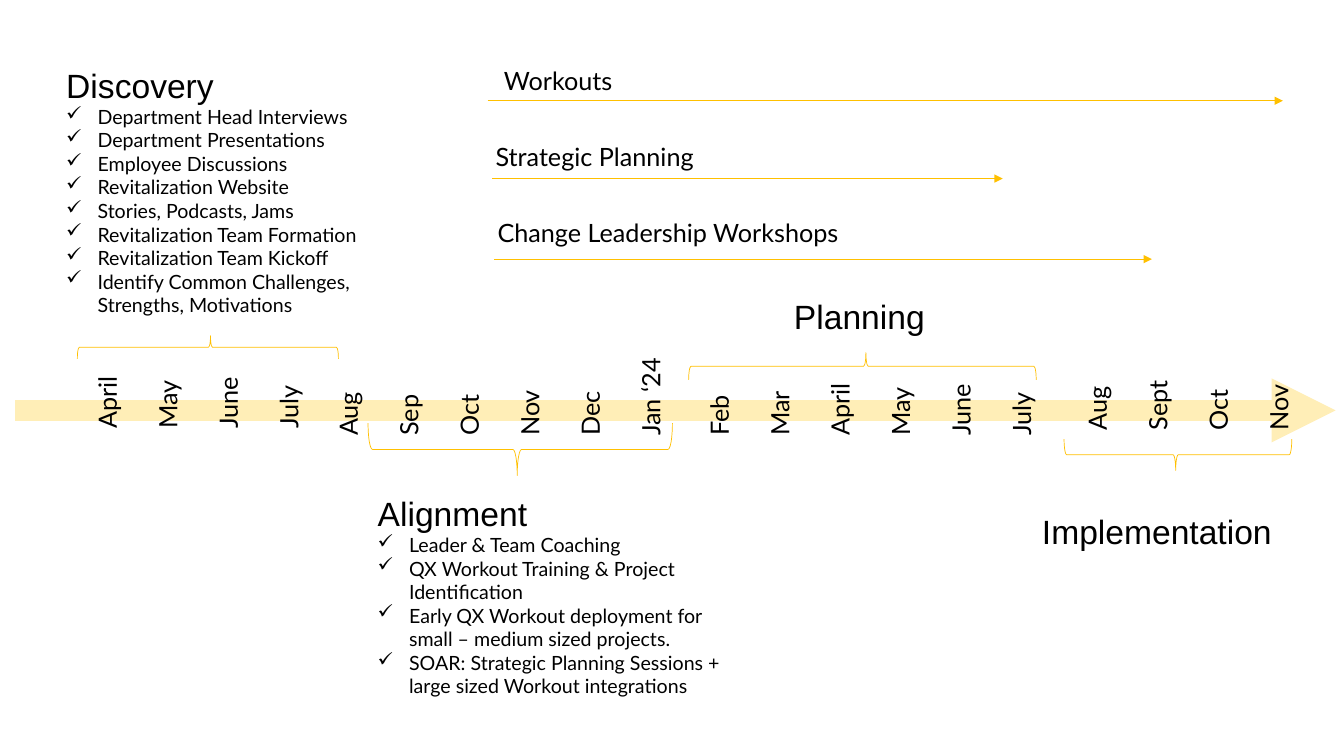
"""Build a change programme timeline with phases, months and parallel tracks."""
from lxml.etree import SubElement
from pptx import Presentation
from pptx.dml.color import RGBColor
from pptx.enum.shapes import MSO_CONNECTOR, MSO_SHAPE
from pptx.oxml.ns import qn
from pptx.util import Cm, Pt

COLORS = {"text": "000000", "accent": "FFC000", "timeline": "FFEEB7", "paper": "FFFFFF"}
HEADING_FONT, BODY_FONT = "Arial", "Lato"
BULLET_INDENT = Cm(0.79)

TIMELINE = (0.38, 33.66, 10.34)

PHASES = [
    ("Discovery", (1.42, 1.5, 9.17, 6.68), [
        "Department Head Interviews",
        "Department Presentations",
        "Employee Discussions",
        "Revitalization Website",
        "Stories, Podcasts, Jams",
        "Revitalization Team Formation",
        "Revitalization Team Kickoff",
        "Identify Common Challenges, Strengths, Motivations",
    ]),
    ("Alignment", (9.27, 12.29, 9.58, 5.46), [
        "Leader & Team Coaching",
        "QX Workout Training & Project Identification",
        "Early QX Workout deployment for small – medium sized projects.",
        "SOAR: Strategic Planning Sessions + large sized Workout integrations",
    ]),
    ("Planning", (19.76, 7.32, 4.37, 1.3), []),
    ("Implementation", (26.01, 12.75, 7.34, 1.27), []),
]

MONTHS = [
    ((3.56, 6.99, 1.93, 6.2), ["April", "May", "June", "July"]),
    ((10.85, 5.31, 2.57, 9.27), ["Aug", "Sep", "Oct", "Nov", "Dec", "Jan ‘24"]),
    ((20.5, 5.61, 1.96, 9.27), ["Feb", "Mar", "April", "May", "June", "July"]),
    ((28.55, 7.06, 1.85, 6.2), ["Aug", "Sept", "Oct", "Nov"]),
]

BRACES = [
    ((4.95, 5.46, 0.58, 6.58), 270),
    ((12.45, 7.49, 1.32, 7.67), 90),
    ((21.39, 4.85, 0.69, 8.76), 270),
    ((29.29, 8.59, 0.79, 5.74), 90),
]

TRACKS = [
    ("Workouts", (12.45, 1.52), (12.29, 32.33, 2.54)),
    ("Strategic Planning", (12.24, 3.43), (12.4, 25.27, 4.5)),
    ("Change Leadership Workshops", (12.29, 5.36), (12.45, 29.03, 6.53)),
]
TRACK_LABEL_SIZE = (9.83, 1.07)


def color(name):
    return RGBColor.from_string(COLORS[name])


def add_arrow(slide, start, end, level, line_color, width):
    arrow = slide.shapes.add_connector(
        MSO_CONNECTOR.STRAIGHT, Cm(start), Cm(level), Cm(end), Cm(level))
    arrow.line.color.rgb = color(line_color)
    arrow.line.width = Pt(width)
    SubElement(arrow.line._get_or_add_ln(), qn("a:tailEnd"), type="triangle")
    SubElement(arrow._element.spPr, qn("a:effectLst"))


def add_text(slide, box, lines, wrap=True):
    """Add a text box from (text, font, size, bulleted) lines."""
    label = slide.shapes.add_textbox(*map(Cm, box))
    frame = label.text_frame
    frame.word_wrap = wrap
    frame.text = "\n".join(line[0] for line in lines)
    for paragraph, (_, font, size, bulleted) in zip(frame.paragraphs, lines):
        if bulleted:
            properties = paragraph._p.get_or_add_pPr()
            properties.set("marL", str(BULLET_INDENT))
            properties.set("indent", str(-BULLET_INDENT))
            SubElement(properties, qn("a:buChar"), char="✓")
        paragraph.font.name = font
        paragraph.font.size = Pt(size)
        paragraph.font.color.rgb = color("text")
    return label


def add_months(slide, box, months):
    label = add_text(slide, box, [(month, BODY_FONT, 18, False) for month in months], wrap=False)
    label.rotation = 270
    for paragraph in label.text_frame.paragraphs:
        paragraph.line_spacing = 2.0


def add_brace(slide, box, rotation):
    brace = slide.shapes.add_shape(MSO_SHAPE.RIGHT_BRACE, *map(Cm, box))
    brace.rotation = rotation
    brace.adjustments[1] = 0.51
    brace.shadow.inherit = False
    brace.fill.background()
    brace.line.color.rgb = color("accent")
    brace.line.width = Pt(0.5)


def main():
    deck = Presentation()
    deck.slide_width, deck.slide_height = Cm(33.87), Cm(19.05)
    slide = deck.slides.add_slide(deck.slide_layouts[6])
    slide.background.fill.solid()
    slide.background.fill.fore_color.rgb = color("paper")

    add_arrow(slide, *TIMELINE, "timeline", 15.25)
    for heading, box, steps in PHASES:
        add_text(slide, box, [(heading, HEADING_FONT, 24, False)]
                 + [(step, BODY_FONT, 14, True) for step in steps])
    for box, months in MONTHS:
        add_months(slide, box, months)
    for box, rotation in BRACES:
        add_brace(slide, box, rotation)
    for track, corner, span in TRACKS:
        add_text(slide, corner + TRACK_LABEL_SIZE, [(track, BODY_FONT, 18, False)])
        add_arrow(slide, *span, "accent", 0.5)
    deck.save("out.pptx")


if __name__ == "__main__":
    main()
